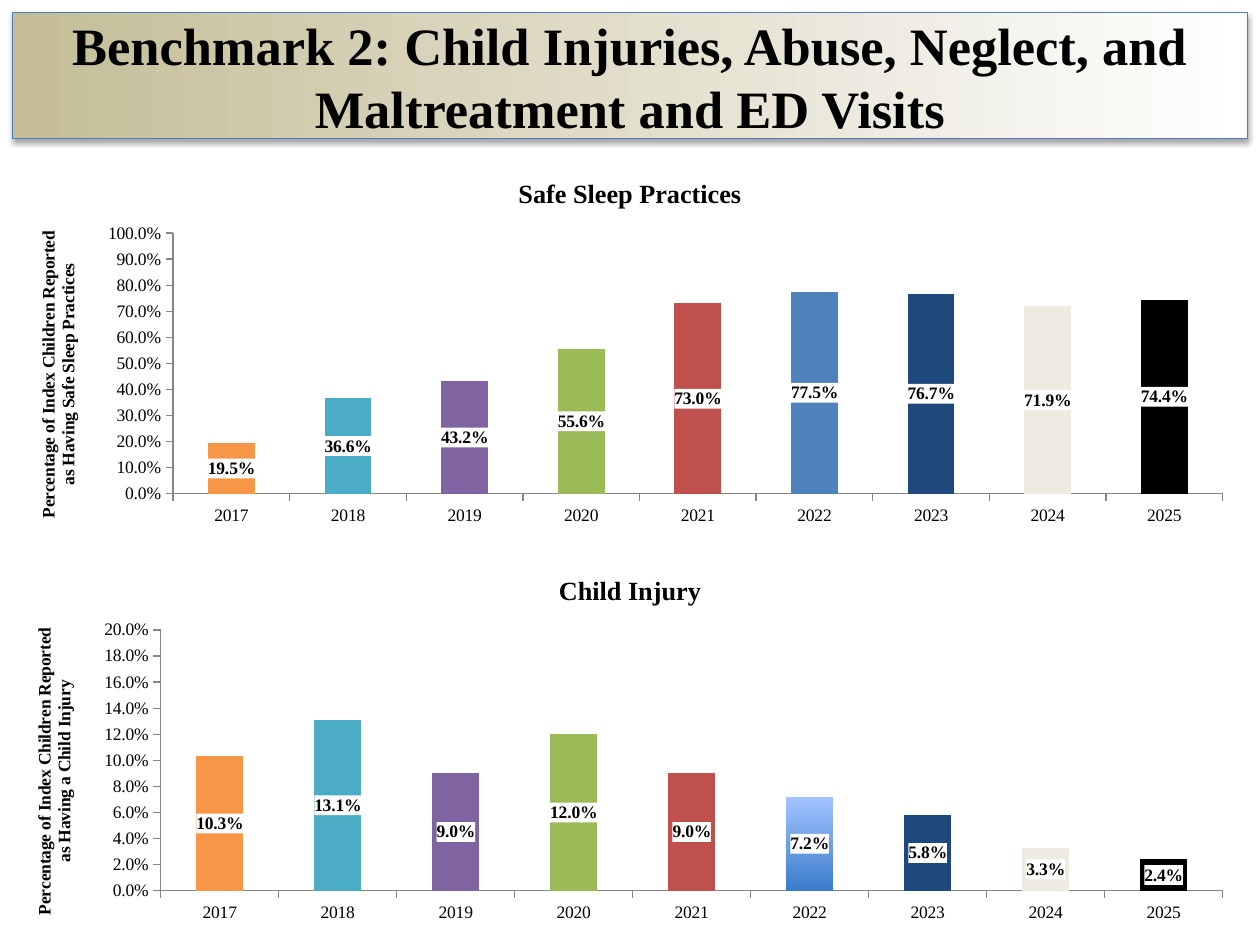
"""Build the Benchmark 2 slide with two yearly column charts."""
from lxml import etree
from pptx import Presentation
from pptx.chart.data import CategoryChartData
from pptx.dml.color import RGBColor
from pptx.enum.chart import XL_CHART_TYPE as ChartType, XL_LABEL_POSITION as LabelPosition
from pptx.enum.chart import XL_TICK_MARK as TickMark
from pptx.enum.text import MSO_ANCHOR as Anchor, MSO_AUTO_SIZE as AutoSize, PP_ALIGN as Align
from pptx.oxml import parse_xml
from pptx.oxml.ns import nsdecls, qn
from pptx.util import Pt

SCALE = 9144
FONT = "Times New Roman"
TITLE = "Benchmark 2: Child Injuries, Abuse, Neglect, and Maltreatment and ED Visits"
YEARS = [str(year) for year in range(2017, 2026)]
BAR_COLORS = ["F79646", "4BACC6", "8064A2", "9BBB59", "C0504D",
              "4F81BD", "1F497D", "EEECE1", "000000"]
CHARTS = [
    {"title": "Safe Sleep Practices", "top": 125, "maximum": 1, "step": 0.1,
     "axis": "Percentage of Index Children Reported as Having Safe Sleep Practices",
     "values": [0.195, 0.366, 0.432, 0.556, 0.73, 0.775, 0.767, 0.719, 0.744],
     "plot": {"x": 0.13, "y": 0.2, "w": 0.85, "h": 0.69}, "gradients": {}},
    {"title": "Child Injury", "top": 440, "maximum": 0.2, "step": 0.02,
     "axis": "Percentage of Index Children Reported as Having a Child Injury",
     "values": [0.103, 0.131, 0.09, 0.12, 0.09, 0.072, 0.058, 0.033, 0.024],
     "plot": {"x": 0.12, "y": 0.2, "w": 0.86, "h": 0.69},
     "gradients": {5: ("A3C4FF", "3A7CCB", 270)}},
]


def px(length):
    return length * SCALE


def color(value):
    return RGBColor.from_string(value)


def format_font(font, size=10, bold=False):
    font.name, font.size, font.bold = FONT, Pt(size), bold
    font.color.rgb = color("000000")


def write_text(frame, text, **style):
    frame.text = text
    paragraph = frame.paragraphs[0]
    paragraph.alignment = Align.CENTER
    format_font(paragraph.runs[0].font, **style)


def fill_gradient(fill, start, end, angle):
    fill.gradient()
    fill.gradient_angle = angle
    for stop, value, position in zip(fill.gradient_stops, (start, end), (0, 1)):
        stop.color.rgb = color(value)
        stop.position = position


def format_title(shape):
    shape.left, shape.top, shape.width, shape.height = map(px, (10, 10, 980, 100))
    fill_gradient(shape.fill, "C4BD97", "FFFFFF", 0)
    shape.line.color.rgb = color("4B7EBC")
    shape.line.width = Pt(0.75)
    shape._element.spPr.append(parse_xml(
        f'<a:effectLst {nsdecls("a")}><a:outerShdw blurRad="39370" dist="22860" dir="5400000" '
        'rotWithShape="0"><a:srgbClr val="000000"><a:alpha val="35000"/></a:srgbClr>'
        '</a:outerShdw></a:effectLst>'))
    frame = shape.text_frame
    frame.word_wrap, frame.auto_size = True, AutoSize.NONE
    frame.vertical_anchor = Anchor.MIDDLE
    write_text(frame, TITLE, size=30, bold=True)


def set_plot_layout(chart, sizes):
    plot_area = chart._chartSpace.chart.plotArea
    for old in plot_area.findall(qn("c:layout")):
        plot_area.remove(old)
    layout = parse_xml(f'<c:layout {nsdecls("c")}><c:manualLayout/></c:layout>')
    settings = {"layoutTarget": "inner", "xMode": "edge", "yMode": "edge", **sizes}
    for name, value in settings.items():
        etree.SubElement(layout[0], qn(f"c:{name}")).set("val", str(value))
    plot_area.insert(0, layout)


def format_axes(chart, item):
    for axis in (chart.category_axis, chart.value_axis):
        axis.has_major_gridlines = False
        axis.major_tick_mark, axis.minor_tick_mark = TickMark.OUTSIDE, TickMark.NONE
        axis.format.line.color.rgb = color("868686")
        axis.format.line.width = Pt(0.75)
        format_font(axis.tick_labels.font)
    axis = chart.value_axis
    axis.minimum_scale, axis.maximum_scale = 0, item["maximum"]
    axis.major_unit = item["step"]
    axis.tick_labels.number_format = "0.0%"
    axis.tick_labels.number_format_is_linked = False
    frame = axis.axis_title.text_frame
    write_text(frame, item["axis"], bold=True)
    body = frame._txBody.bodyPr
    body.set("rot", "-5400000")
    body.set("vert", "horz")


def format_labels(labels):
    labels.show_value = True
    labels.number_format, labels.number_format_is_linked = "0.0%", False
    labels.position = LabelPosition.CENTER
    format_font(labels.font, bold=True)
    labels._element.find(qn("c:txPr")).addprevious(parse_xml(
        f'<c:spPr {nsdecls("c", "a")}><a:solidFill><a:srgbClr val="FFFFFF"/></a:solidFill></c:spPr>'))


def add_column_chart(slide, item):
    data = CategoryChartData(number_format="0.0%")
    data.categories = YEARS
    data.add_series("Series 1", item["values"])
    box = map(px, (10, item["top"], 980, 300))
    chart = slide.shapes.add_chart(ChartType.COLUMN_CLUSTERED, *box, data).chart
    format_font(chart.font)
    chart.has_legend = False
    chart.has_title = True
    write_text(chart.chart_title.text_frame, item["title"], size=15, bold=True)
    chart.chart_title.include_in_layout = False
    set_plot_layout(chart, item["plot"])
    format_axes(chart, item)
    plot = chart.plots[0]
    plot.gap_width, plot.vary_by_categories = 150, False
    series = plot.series[0]
    series.invert_if_negative = False
    for index, value in enumerate(BAR_COLORS):
        fill = series.points[index].format.fill
        if index in item["gradients"]:
            fill_gradient(fill, *item["gradients"][index])
        else:
            fill.solid()
            fill.fore_color.rgb = color(value)
    format_labels(series.data_labels)


def main():
    presentation = Presentation()
    presentation.slide_width, presentation.slide_height = px(1000), px(750)
    slide = presentation.slides.add_slide(presentation.slide_layouts[5])
    format_title(slide.shapes.title)
    for item in CHARTS:
        add_column_chart(slide, item)
    presentation.save("out.pptx")


if __name__ == "__main__":
    main()
